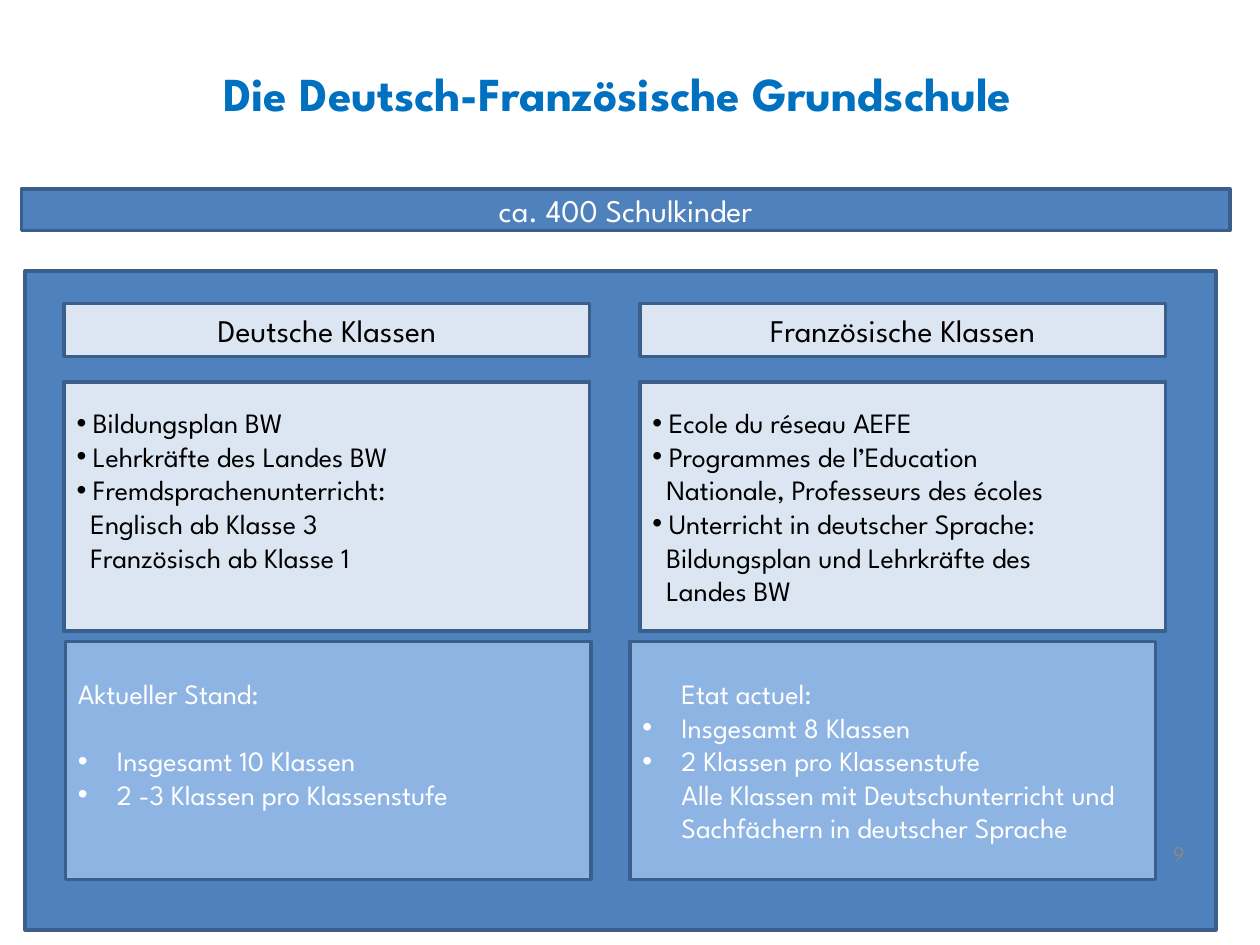
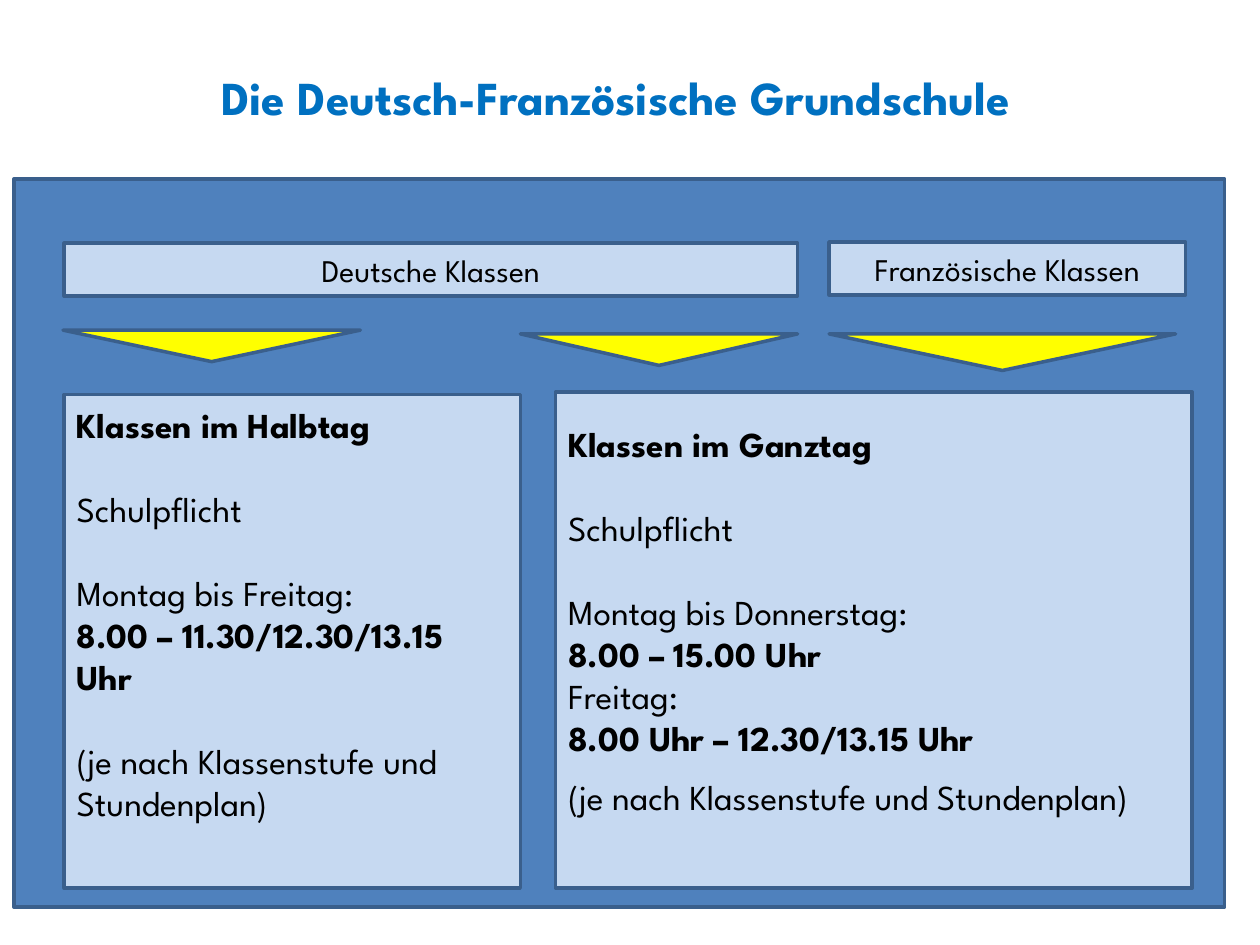
from lxml.etree import SubElement
from pptx import Presentation
from pptx.dml.color import RGBColor
from pptx.enum.shapes import MSO_SHAPE as Shape
from pptx.enum.text import MSO_ANCHOR as Anchor, PP_ALIGN as Align
from pptx.oxml.ns import qn
from pptx.util import Inches, Pt

FONT = "League Spartan"
TITLE = RGBColor(0x00, 0x70, 0xC0)
BLUE = RGBColor(0x4F, 0x81, 0xBD)
EDGE = RGBColor(0x3A, 0x5F, 0x8C)
MID = RGBColor(0x8E, 0xB4, 0xE3)
PALE = RGBColor(0xDC, 0xE6, 0xF2)
LIGHT = RGBColor(0xC6, 0xD9, 0xF1)
YELLOW = RGBColor(0xFF, 0xFF, 0x00)
GREY = RGBColor(0x89, 0x89, 0x89)
BLACK = RGBColor(0, 0, 0)
WHITE = RGBColor(0xFF, 0xFF, 0xFF)


def write(shape, *lines, size=18, color=BLACK, bold=False, align=Align.LEFT,
          anchor=Anchor.MIDDLE, top=0.05):
    """Each line is a text, or a text with a dict of bold, bullet, left, before."""
    frame = shape.text_frame
    frame.word_wrap = True
    frame.vertical_anchor = anchor
    frame.margin_top = Inches(top)
    for i, line in enumerate(lines):
        text, opts = (line, {}) if isinstance(line, str) else line
        para = frame.paragraphs[0] if i == 0 else frame.add_paragraph()
        left = Inches(opts.get("left", 0))
        props = para._p.get_or_add_pPr()
        props.set("marL", str(left))
        props.set("indent", str(-left if opts.get("bullet") else 0))
        if opts.get("bullet"):
            SubElement(props, qn("a:buFont")).set("typeface", "Arial")
            SubElement(props, qn("a:buChar")).set("char", "•")
        para.alignment = align
        para.space_before = Pt(opts.get("before", 0))
        run = para.add_run()
        run.text = text
        font = run.font
        font.name, font.size = FONT, Pt(size)
        font.bold = opts.get("bold", bold)
        font.color.rgb = color


def draw(slide, box, fill, kind=Shape.RECTANGLE):
    shape = slide.shapes.add_shape(kind, *map(Inches, box))
    shape.shadow.inherit = False
    shape.fill.solid()
    shape.fill.fore_color.rgb = fill
    shape.line.color.rgb = EDGE
    shape.line.width = Pt(2)
    return shape


def label(slide, box, text, **fmt):
    shape = slide.shapes.add_textbox(*map(Inches, box))
    write(shape, text, **fmt)


def head(slide, box):
    label(slide, box, "Die Deutsch-Französische Grundschule",
          size=27, color=TITLE, bold=True, align=Align.CENTER)


def band(slide, box, text, fill, color=BLACK):
    write(draw(slide, box, fill), text, color=color, align=Align.CENTER)


def card(slide, box, lines, fill, top, **fmt):
    write(draw(slide, box, fill), *lines, anchor=Anchor.TOP, top=top, **fmt)


def arrow(slide, box):
    draw(slide, box, YELLOW, Shape.ISOSCELES_TRIANGLE).rotation = 180


def dot(text, left=0.13, before=0):
    return text, {"bullet": True, "left": left, "before": before}


def inset(text, left=0.11):
    return text, {"left": left}


def strong(text):
    return text, {"bold": True}


def gap(text, before=24):
    return text, {"before": before}


GERMAN = [
    dot("Bildungsplan BW"),
    dot("Lehrkräfte des Landes BW"),
    dot("Fremdsprachenunterricht:"),
    inset("Englisch ab Klasse 3"),
    inset("Französisch ab Klasse 1"),
]
FRENCH = [
    dot("Ecole du réseau AEFE"),
    dot("Programmes de l’Education"),
    inset("Nationale, Professeurs des écoles"),
    dot("Unterricht in deutscher Sprache:"),
    inset("Bildungsplan und Lehrkräfte des"),
    inset("Landes BW"),
]
STATUS = [
    "Aktueller Stand:",
    dot("Insgesamt 10 Klassen", 0.31, 19.2),
    dot("2 -3 Klassen pro Klassenstufe", 0.31),
]
ETAT = [
    inset("Etat actuel:", 0.31),
    dot("Insgesamt 8 Klassen", 0.31),
    dot("2 Klassen pro Klassenstufe", 0.31),
    inset("Alle Klassen mit Deutschunterricht und "
          "Sachfächern in deutscher Sprache", 0.31),
]
HALF = [
    strong("Klassen im Halbtag"),
    gap("Schulpflicht"),
    gap("Montag bis Freitag:"),
    strong("8.00 – 11.30/12.30/13.15 Uhr"),
    gap("(je nach Klassenstufe und Stundenplan)"),
]
FULL = [
    strong("Klassen im Ganztag"),
    gap("Schulpflicht"),
    gap("Montag bis Donnerstag:"),
    strong("8.00 – 15.00 Uhr"),
    "Freitag:",
    strong("8.00 Uhr – 12.30/13.15 Uhr"),
    gap("(je nach Klassenstufe und Stundenplan)", 9.6),
]


def column(slide, x, y, name, facts, state, shift):
    """Stack of header, facts and current state; shift moves the state card."""
    wide = 4.17
    card(slide, (x + shift, y + 2.68, wide, 1.89), state, MID, 0.28,
         size=16, color=WHITE)
    band(slide, (x, y, wide, 0.42), name, PALE)
    card(slide, (x, y + 0.62, wide, 1.98), facts, PALE, 0.19, size=16)


def classes(slide, box):
    x, y, wide, high = box
    draw(slide, box, BLUE)
    column(slide, x + 0.31, y + 0.26, "Deutsche Klassen", GERMAN, STATUS, 0.01)
    column(slide, x + 4.88, y + 0.26, "Französische Klassen", FRENCH, ETAT, -0.08)
    label(slide, (x + wide - 0.65, y + 4.42, 0.5, 0.4), "9",
          size=12, color=GREY, align=Align.RIGHT)


def times(slide, box):
    x, y, wide, high = box
    draw(slide, box, BLUE)
    band(slide, (x + 0.4, y + 0.51, 5.82, 0.42), "Deutsche Klassen", LIGHT)
    band(slide, (x + 6.47, y + 0.5, 2.83, 0.42), "Französische Klassen", LIGHT)
    card(slide, (x + 0.4, y + 1.71, 3.62, 3.92), HALF, LIGHT, 0.07, size=20)
    card(slide, (x + 4.3, y + 1.69, 5.05, 3.94), FULL, LIGHT, 0.24, size=20)
    for dx, dy, w, h in ((6.47, 1.23, 2.75, 0.29), (0.39, 1.2, 2.36, 0.25),
                         (4.02, 1.23, 2.2, 0.25)):
        arrow(slide, (x + dx, y + dy, w, h))


def main():
    deck = Presentation()
    deck.slide_width, deck.slide_height = Inches(10), Inches(7.5)
    blank = deck.slide_layouts[6]

    first = deck.slides.add_slide(blank)
    head(first, (0.11, 0.11, 9.58, 1.25))
    band(first, (0.17, 1.5, 9.59, 0.33), "ca. 400 Schulkinder", BLUE, WHITE)
    classes(first, (0.2, 2.15, 9.45, 5.23))

    second = deck.slides.add_slide(blank)
    head(second, (0, 0.3, 9.77, 0.94))
    times(second, (0.11, 1.42, 9.61, 5.78))

    deck.save("out.pptx")


if __name__ == "__main__":
    main()
